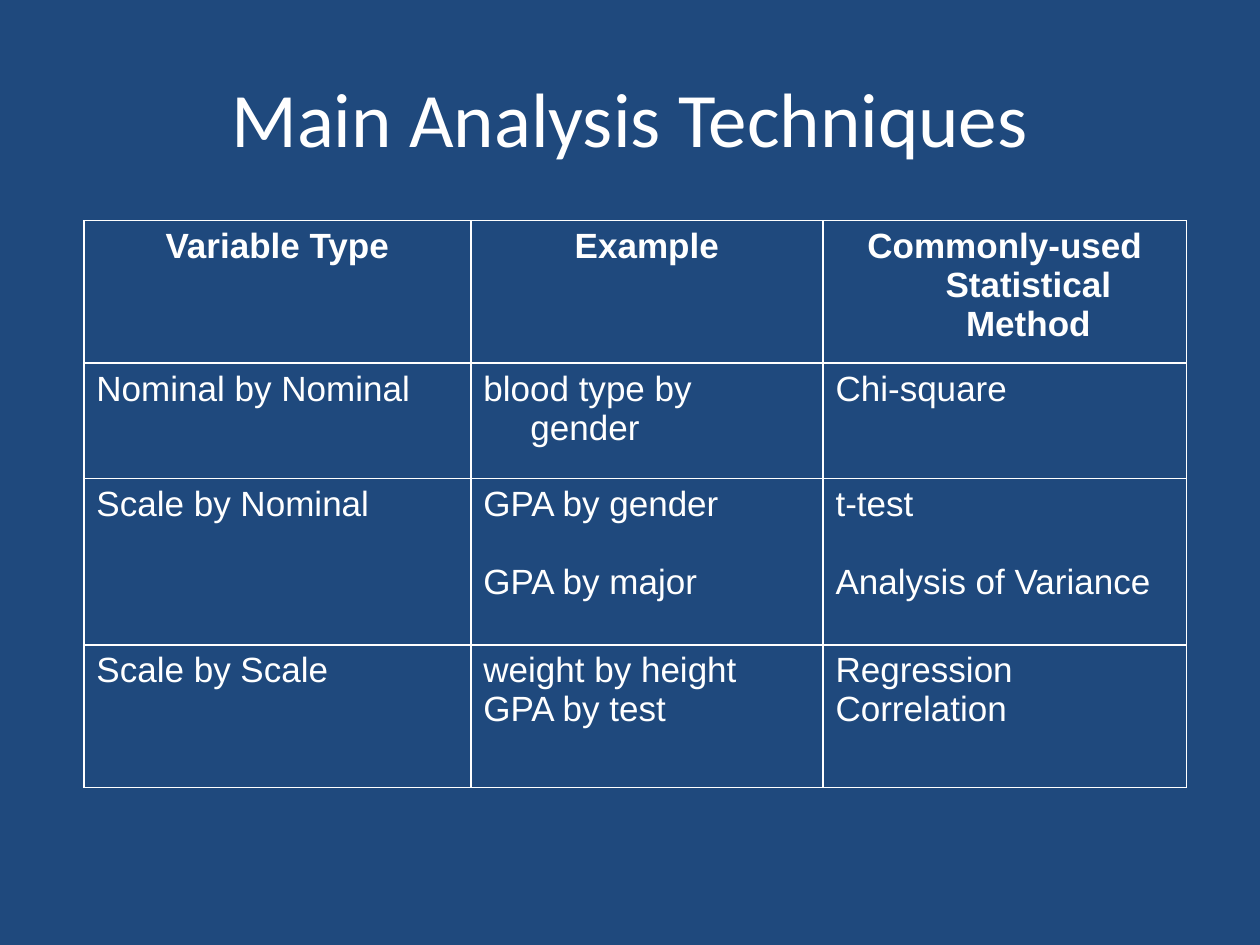
"""Build a slide with a table of the main analysis techniques."""
from lxml import etree
from pptx import Presentation
from pptx.dml.color import RGBColor
from pptx.enum.text import MSO_ANCHOR, PP_ALIGN
from pptx.oxml.ns import qn
from pptx.util import Cm, Pt

CENTER, LEFT = PP_ALIGN.CENTER, PP_ALIGN.LEFT
MIDDLE = MSO_ANCHOR.MIDDLE
COLORS = {"background": "1F497D", "light": "FFFFFF"}

TITLE = "Main Analysis Techniques"
HEADINGS = [["Variable Type"], ["Example"], ["Commonly-used Statistical Method"]]
TECHNIQUES = [
    [["Nominal by Nominal"], ["blood type by gender"], ["Chi-square"]],
    [["Scale by Nominal"], ["GPA by gender", "GPA by major"], ["t-test", "Analysis of Variance"]],
    [["Scale by Scale"], ["weight by height", "GPA by test"], ["Regression", "Correlation"]],
]
COLUMN_WIDTHS = [7.8, 7.1, 7.33]
ROW_HEIGHTS = [2.87, 2.33, 3.35, 2.87]
SPACED_ROW = 2
HANGING_INDENT = Cm(0.95)


def write(paragraph, text, font_name, size, align, bold=False):
    paragraph.text = text
    paragraph.alignment = align
    font = paragraph.font
    font.name, font.size, font.bold = font_name, Pt(size), bold
    font.color.rgb = RGBColor.from_string(COLORS["light"])


def add_borders(cell):
    properties = cell._tc.get_or_add_tcPr()
    for side in ("lnL", "lnR", "lnT", "lnB"):
        line = etree.SubElement(properties, qn(f"a:{side}"), w=str(Pt(1)))
        fill = etree.SubElement(line, qn("a:solidFill"))
        etree.SubElement(fill, qn("a:srgbClr"), val=COLORS["light"])


def fill_cell(cell, lines, is_heading, gap):
    add_borders(cell)
    cell.fill.background()
    frame = cell.text_frame
    for index, text in enumerate(lines):
        paragraph = frame.add_paragraph() if index else frame.paragraphs[0]
        write(paragraph, text, "Arial", 20, CENTER if is_heading else LEFT, is_heading)
        if index and gap:
            paragraph.space_before = Pt(gap)
        indents = paragraph._p.get_or_add_pPr()
        indents.set("marL", str(HANGING_INDENT))
        indents.set("indent", str(-HANGING_INDENT))


def add_title(slide):
    frame = slide.shapes.add_textbox(Cm(1.27), Cm(0.76), Cm(22.86), Cm(3.18)).text_frame
    frame.word_wrap = True
    frame.vertical_anchor = MIDDLE
    write(frame.paragraphs[0], TITLE, "Calibri", 44, CENTER)


def add_techniques(slide):
    rows = [HEADINGS, *TECHNIQUES]
    table = slide.shapes.add_table(
        len(rows), len(HEADINGS), Cm(1.69), Cm(4.45),
        Cm(sum(COLUMN_WIDTHS)), Cm(sum(ROW_HEIGHTS))).table
    table.first_row = table.horz_banding = False
    for column, width in zip(table.columns, COLUMN_WIDTHS):
        column.width = Cm(width)
    for r, (row, height) in enumerate(zip(rows, ROW_HEIGHTS)):
        table.rows[r].height = Cm(height)
        for c, lines in enumerate(row):
            fill_cell(table.cell(r, c), lines, r == 0, 22 if r == SPACED_ROW else 0)


def main():
    deck = Presentation()
    deck.slide_width, deck.slide_height = Cm(25.4), Cm(19.05)
    slide = deck.slides.add_slide(deck.slide_layouts[6])
    background = slide.background.fill
    background.solid()
    background.fore_color.rgb = RGBColor.from_string(COLORS["background"])
    add_techniques(slide)
    add_title(slide)
    deck.save("out.pptx")


if __name__ == "__main__":
    main()
